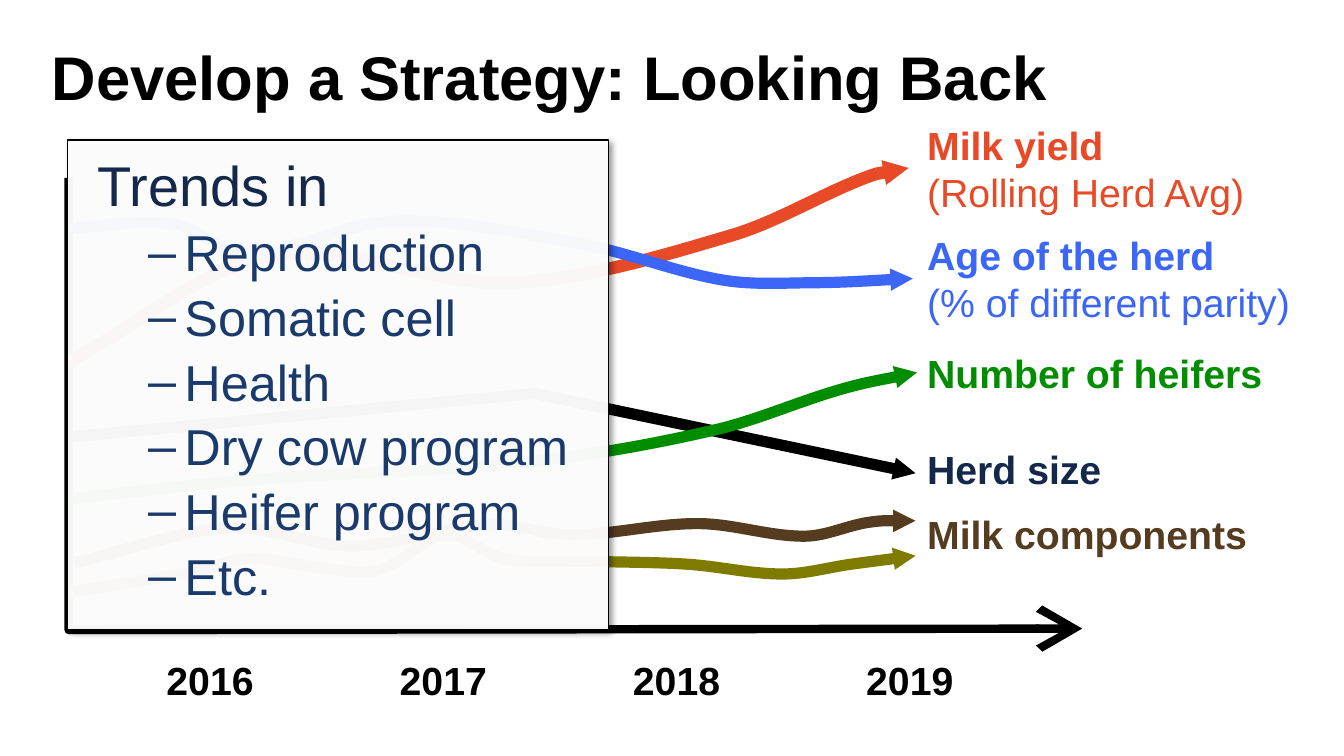
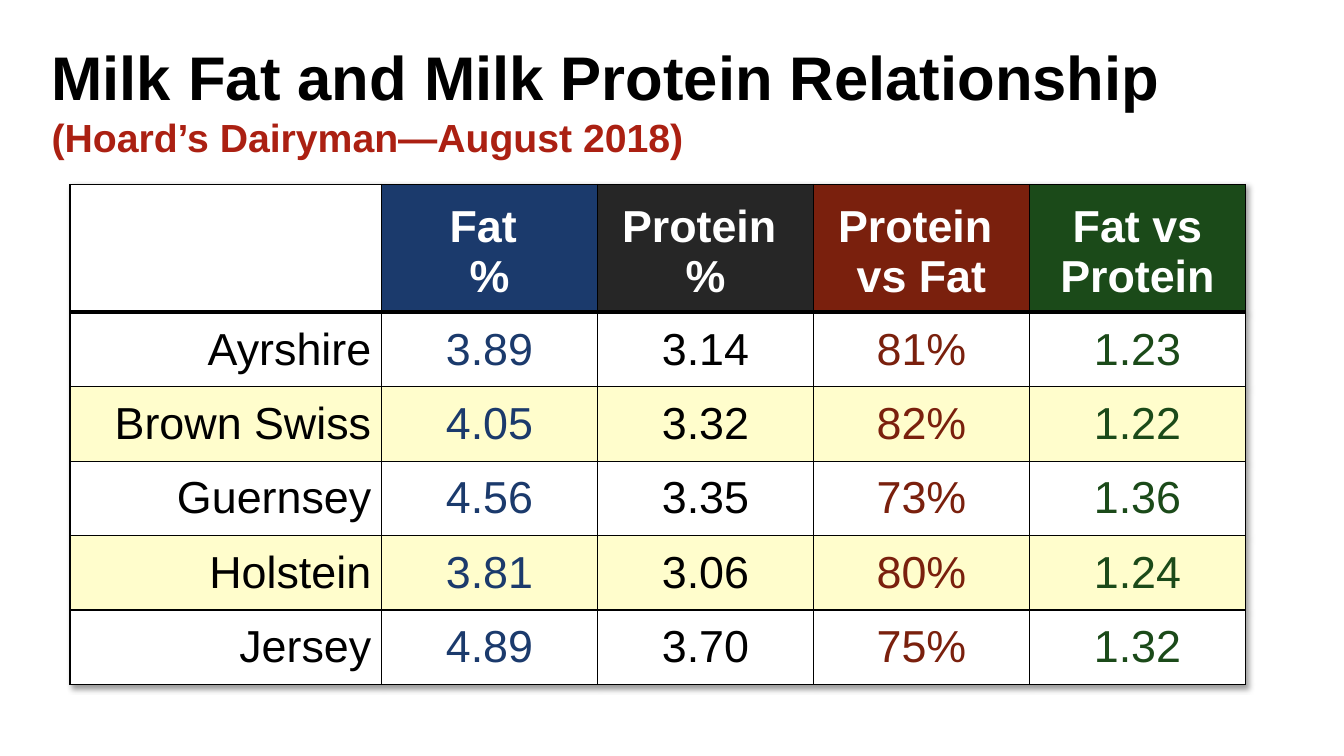
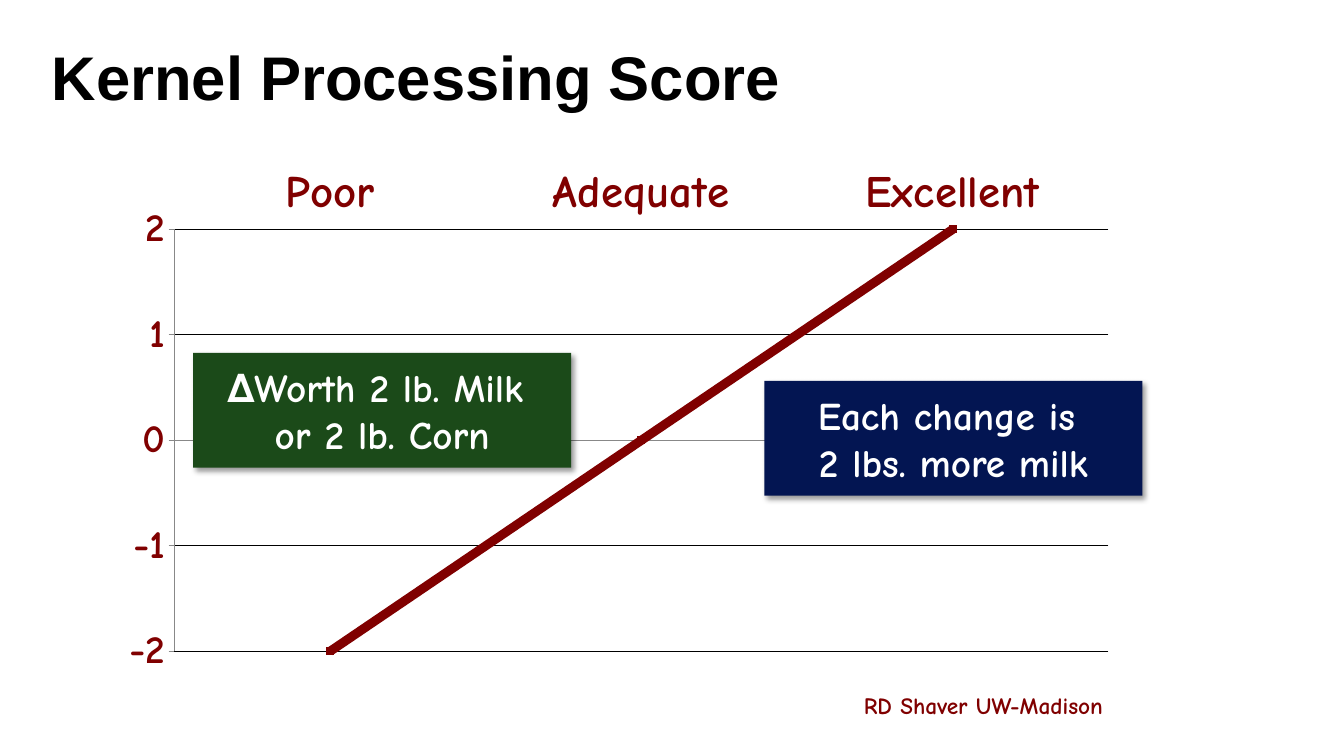
import dataclasses
import itertools

import pptx
import pptx.chart.data
import pptx.dml.color
import pptx.enum.chart
import pptx.enum.shapes
import pptx.enum.text
import pptx.oxml
import pptx.oxml.ns
import pptx.util

Pt = pptx.util.Pt
RGBColor = pptx.dml.color.RGBColor
ALIGN = pptx.enum.text.PP_ALIGN
ANCHOR = pptx.enum.text.MSO_ANCHOR
qn = pptx.oxml.ns.qn

BLACK = RGBColor(0x00, 0x00, 0x00)
WHITE = RGBColor(0xFF, 0xFF, 0xFF)
ORANGE = RGBColor(0xE8, 0x49, 0x27)
BLUE = RGBColor(0x3B, 0x66, 0xF8)
GREEN = RGBColor(0x00, 0x8E, 0x00)
BROWN = RGBColor(0x55, 0x3C, 0x21)
OLIVE = RGBColor(0x7F, 0x7B, 0x00)
INK = RGBColor(0x13, 0x28, 0x4B)
NAVY = RGBColor(0x1B, 0x3A, 0x6C)
MIDNIGHT = RGBColor(0x03, 0x15, 0x52)
CHARCOAL = RGBColor(0x26, 0x26, 0x26)
BRICK = RGBColor(0x7A, 0x20, 0x0D)
FOREST = RGBColor(0x1B, 0x4A, 0x19)
RED = RGBColor(0xAB, 0x20, 0x12)
MAROON = RGBColor(0x80, 0x00, 0x00)
CREAM = RGBColor(0xFF, 0xFD, 0xCC)
GRAY = RGBColor(0x88, 0x88, 0x88)

TITLE = {"name": "Arial", "size": Pt(44), "bold": True, "color": BLACK}
SUBTITLE = {**TITLE, "size": Pt(28), "color": RED}
LABEL = {"name": "Arial", "size": Pt(28), "bold": True, "color": BLACK}
TOPIC_HEADING = {"name": "Arial", "size": Pt(40), "color": INK}
TOPIC = {"name": "Arial", "size": Pt(36), "color": NAVY}
CELL = {"name": "Arial", "size": Pt(32), "bold": False, "color": BLACK}
HEADING_CELL = {**CELL, "bold": True, "color": WHITE}
CALLOUT = {"name": "Comic Neue", "size": Pt(28), "bold": True, "color": WHITE}
CREDIT = {**CALLOUT, "size": Pt(16.7), "color": MAROON}

SHADOW = (
    '<a:outerShdw {} blurRad="50800" dist="38100" dir="2700000" algn="tl" rotWithShape="0">'
    '<a:srgbClr val="000000"><a:alpha val="40000"/></a:srgbClr></a:outerShdw>'
)


@dataclasses.dataclass
class Trend:
    color: RGBColor
    knots: list
    weight: float = 8
    smooth: bool = True


@dataclasses.dataclass
class TrendLabel:
    top: float
    color: RGBColor
    heading: str
    detail: str = ""


MILK_YIELD = Trend(ORANGE, [(2, 138), (144, 63), (317, 82), (475, 48), (570, 7), (601, 0)], weight=9)
HERD_SIZE = Trend(BLACK, [(4, 192), (334, 161), (606, 218)], smooth=False)
FIRST_COMPONENT = Trend(BROWN, [
    (5, 282), (115, 257), (204, 270), (302, 255), (361, 262), (451, 254), (527, 263), (573, 253), (606, 252)])
SECOND_COMPONENT = Trend(OLIVE, [
    (2, 303), (87, 289), (130, 279), (177, 285), (223, 287), (270, 262),
    (312, 279), (376, 281), (443, 283), (511, 290), (560, 283), (606, 277)])
HEIFERS = Trend(GREEN, [(4, 236), (128, 223), (329, 210), (463, 187), (553, 158), (607, 146)])
HERD_AGE = Trend(BLUE, [(2, 43), (76, 40), (126, 61), (234, 38), (366, 54), (468, 80), (531, 82), (604, 79)])
TIME_AXIS = Trend(BLACK, [(1, 7), (1, 330), (725, 329)], weight=6, smooth=False)

TRENDS = [MILK_YIELD, HERD_SIZE, FIRST_COMPONENT, SECOND_COMPONENT, HEIFERS, HERD_AGE]
TREND_LABELS = [
    TrendLabel(-37, ORANGE, "Milk yield", "(Rolling Herd Avg)"),
    TrendLabel(42, BLUE, "Age of the herd", "(% of different parity)"),
    TrendLabel(126, GREEN, "Number of heifers"),
    TrendLabel(194.5, INK, "Herd size"),
    TrendLabel(241, BROWN, "Milk components"),
]
YEARS = ["2016", "2017", "2018", "2019"]
TOPICS = ["Reproduction", "Somatic cell", "Health", "Dry cow program", "Heifer program", "Etc."]

HEADINGS = [
    ("", WHITE),
    ("Fat \n%", NAVY),
    ("Protein \n%", CHARCOAL),
    ("Protein \nvs Fat", BRICK),
    ("Fat vs Protein", FOREST),
]
VALUE_COLORS = [BLACK, NAVY, BLACK, BRICK, FOREST]
BREEDS = [
    ("Ayrshire", "3.89", "3.14", "81%", "1.23"),
    ("Brown Swiss", "4.05", "3.32", "82%", "1.22"),
    ("Guernsey", "4.56", "3.35", "73%", "1.36"),
    ("Holstein", "3.81", "3.06", "80%", "1.24"),
    ("Jersey", "4.89", "3.70", "75%", "1.32"),
]


def element(template):
    return pptx.oxml.parse_xml(template.format(pptx.oxml.ns.nsdecls("a", "c")))


def set_attributes(target, values):
    for name, value in values.items():
        setattr(target, name, value)


def set_font(font, values):
    set_attributes(font, {name: value for name, value in values.items() if name != "color"})
    font.color.rgb = values["color"]


def set_line(line, color, weight):
    line.color.rgb = color
    line.width = Pt(weight)


def set_fill(fill, color):
    fill.solid()
    fill.fore_color.rgb = color


def set_margins(target, *margins):
    sides = ("margin_left", "margin_top", "margin_right", "margin_bottom")
    set_attributes(target, dict(zip(sides, map(Pt, margins))))


def write(paragraph, text, values, align=ALIGN.LEFT):
    paragraph.alignment = align
    for index, line in enumerate(text.split("\n")):
        if index:
            paragraph.add_line_break()
        run = paragraph.add_run()
        run.text = line
        set_font(run.font, values)


def add_text(slide, box, text, values, align=ALIGN.LEFT):
    frame = slide.shapes.add_textbox(*map(Pt, box)).text_frame
    frame.word_wrap = True
    write(frame.paragraphs[0], text, values, align)
    return frame


def add_panel(slide, box, color):
    panel = slide.shapes.add_shape(pptx.enum.shapes.MSO_SHAPE.RECTANGLE, *map(Pt, box))
    set_fill(panel.fill, color)
    panel.line.fill.background()
    panel.shadow.inherit = False
    panel.element.spPr.find(qn("a:effectLst")).append(element(SHADOW))
    panel.text_frame.word_wrap = True
    return panel


def add_title(slide, title, subtitle=""):
    frame = add_text(slide, (27.4, 18.5, 927, 90), title, TITLE)
    set_margins(frame, 9.4, 9.4, 9.4, 5)
    if subtitle:
        write(frame.paragraphs[0], "\n" + subtitle, SUBTITLE)


def knot_slopes(knots):
    before = knots[:1] + knots[:-1]
    after = knots[1:] + knots[-1:]
    return [(y2 - y1) / (x2 - x1) for (x1, y1), (x2, y2) in zip(before, after)]


def curve_points(knots):
    points = []
    for (start, slope), (end, end_slope) in itertools.pairwise(zip(knots, knot_slopes(knots))):
        reach = (end[0] - start[0]) / 3
        points += [
            (start[0] + reach, start[1] + reach * slope),
            (end[0] - reach, end[1] - reach * end_slope),
            end,
        ]
    return points


def bend_segments(outline):
    corners = outline.findall(qn("a:lnTo"))
    for first in range(0, len(corners), 3):
        curve = element("<a:cubicBezTo {}/>")
        corners[first].addprevious(curve)
        for corner in corners[first:first + 3]:
            curve.append(corner[0])
            outline.remove(corner)


def add_trend(slide, left, top, trend, head, head_size):
    points = curve_points(trend.knots) if trend.smooth else trend.knots[1:]
    builder = slide.shapes.build_freeform(*map(Pt, trend.knots[0]), scale=1.0)
    builder.add_line_segments([(Pt(x), Pt(y)) for x, y in points], close=False)
    arrow = builder.convert_to_shape(Pt(left), Pt(top))
    properties = arrow.element.spPr
    if trend.smooth:
        bend_segments(properties.find(".//" + qn("a:path")))
    arrow.fill.background()
    arrow.shadow.inherit = False
    set_line(arrow.line, trend.color, trend.weight)
    arrowhead = f'type="{head}" w="{head_size}" len="{head_size}"'
    properties.find(qn("a:ln")).append(element("<a:tailEnd {} " + arrowhead + "/>"))


def add_trend_label(slide, left, top, label):
    values = {**LABEL, "color": label.color}
    frame = add_text(slide, (left, top + label.top, 300, 75 if label.detail else 41), label.heading, values)
    if label.detail:
        write(frame.paragraphs[0], "\n" + label.detail, {**values, "bold": False})


def add_trend_plot(slide, left, top):
    add_trend(slide, left, top, TIME_AXIS, "arrow", "lg")
    for trend in TRENDS:
        add_trend(slide, left, top, trend, "triangle", "sm")
    for label in TREND_LABELS:
        add_trend_label(slide, left + 607.2, top, label)
    for index, year in enumerate(YEARS):
        add_text(slide, (left + 57 + index * 166.6, top + 345, 90, 41), year, LABEL, ALIGN.CENTER)


def add_topics(slide, box):
    panel = add_panel(slide, box, WHITE)
    panel.element.spPr.find(".//" + qn("a:srgbClr")).append(element('<a:alpha {} val="96000"/>'))
    set_line(panel.line, BLACK, 0.75)
    frame = panel.text_frame
    frame.vertical_anchor = ANCHOR.TOP
    set_margins(frame, 21.6, 7.2, 14.4, 7.2)
    write(frame.paragraphs[0], "Trends in", TOPIC_HEADING)
    for topic in TOPICS:
        paragraph = frame.add_paragraph()
        properties = paragraph._p.get_or_add_pPr()
        properties.set("marL", str(Pt(62)))
        properties.set("indent", str(Pt(-26)))
        properties.append(element('<a:buFont {} typeface="Arial"/>'))
        properties.append(element('<a:buChar {} char="–"/>'))
        paragraph.space_before = Pt(3)
        write(paragraph, topic, TOPIC)


def add_borders(cell, weights):
    properties = cell._tc.get_or_add_tcPr()
    for index, (side, weight) in enumerate(zip("LRTB", weights)):
        border = element("<a:ln%s {} w='%d'><a:solidFill><a:srgbClr val='%s'/></a:solidFill></a:ln%s>"
                         % (side, Pt(weight), BLACK, side))
        properties.insert(index, border)


def fill_cell(cell, text, values, fill, align, anchor, weights):
    set_fill(cell.fill, fill)
    cell.vertical_anchor = anchor
    set_margins(cell, 7.2, 7.2, 7.2, 7.2)
    add_borders(cell, weights)
    if text:
        write(cell.text_frame.paragraphs[0], text, values, align)


def add_breed_table(slide, left, top):
    widths = [222.5] + [154.3] * (len(HEADINGS) - 1)
    heights = [89.2] + [53.2] * len(BREEDS)
    box = (left, top, sum(widths), sum(heights))
    table = slide.shapes.add_table(len(heights), len(widths), *map(Pt, box)).table
    table.first_row = table.horz_banding = False
    effects = element("<a:effectLst {}/>")
    effects.append(element(SHADOW))
    table._tbl.tblPr.insert(0, effects)
    for column, width in zip(table.columns, widths):
        column.width = Pt(width)
    for row, height in zip(table.rows, heights):
        row.height = Pt(height)
    for index, (heading, fill) in enumerate(HEADINGS):
        fill_cell(table.cell(0, index), heading, HEADING_CELL, fill, ALIGN.CENTER, ANCHOR.BOTTOM, (1, 1, 1, 3))
    for row, breed in enumerate(BREEDS, 1):
        weights = (1, 1, 3 if row == 1 else 1, 1)
        fill = WHITE if row % 2 else CREAM
        for index, (text, color) in enumerate(zip(breed, VALUE_COLORS)):
            align = ALIGN.CENTER if index else ALIGN.RIGHT
            fill_cell(table.cell(row, index), text, {**CELL, "color": color}, fill, align, ANCHOR.MIDDLE, weights)


def format_axes(ratings, change):
    for axis, size in ((ratings, 32), (change, 28)):
        set_font(axis.tick_labels.font, {**CALLOUT, "size": Pt(size), "color": MAROON})
        axis.major_tick_mark = pptx.enum.chart.XL_TICK_MARK.OUTSIDE
        axis.minor_tick_mark = pptx.enum.chart.XL_TICK_MARK.NONE
        set_line(axis.format.line, GRAY, 0.75)
    ratings.tick_label_position = pptx.enum.chart.XL_TICK_LABEL_POSITION.HIGH
    set_attributes(change, {
        "minimum_scale": -2, "maximum_scale": 2, "major_unit": 1, "has_major_gridlines": True})
    set_line(change.major_gridlines.format.line, BLACK, 0.75)


def format_score(score):
    score.smooth = False
    set_line(score.format.line, MAROON, 6.5)
    set_attributes(score.marker, {"style": pptx.enum.chart.XL_MARKER_STYLE.SQUARE, "size": 5})
    set_fill(score.marker.format.fill, MAROON)
    score.marker.format.line.color.rgb = MAROON


def place_plot_area(chart, x, y, w, h):
    area = chart.element.find(".//" + qn("c:plotArea"))
    for layout in area.findall(qn("c:layout")):
        area.remove(layout)
    settings = {"layoutTarget": "inner", "xMode": "edge", "yMode": "edge", "x": x, "y": y, "w": w, "h": h}
    places = "".join(f'<c:{name} val="{value}"/>' for name, value in settings.items())
    area.insert(0, element("<c:layout {}><c:manualLayout>" + places + "</c:manualLayout></c:layout>"))


def add_score_chart(slide, box):
    scores = pptx.chart.data.CategoryChartData()
    scores.categories = ["Poor", "Adequate", "Excellent"]
    scores.add_series("Series 1", (-2, 0, 2))
    kind = pptx.enum.chart.XL_CHART_TYPE.LINE_MARKERS
    chart = slide.shapes.add_chart(kind, *map(Pt, box), scores).chart
    chart.has_title = chart.has_legend = False
    set_font(chart.font, {"name": "Comic Neue", "size": Pt(16.7), "color": BLACK})
    format_axes(chart.category_axis, chart.value_axis)
    chart.plots[0].vary_by_categories = False
    format_score(chart.plots[0].series[0])
    place_plot_area(chart, 0.08, 0.17, 0.91, 0.79)


def add_callout(slide, left, top, color, lines, side_margin):
    frame = add_panel(slide, (left, top, 270, 82), color).text_frame
    frame.vertical_anchor = ANCHOR.MIDDLE
    set_margins(frame, side_margin, 7.2, side_margin, 7.2)
    for index, line in enumerate(lines):
        paragraph = frame.add_paragraph() if index else frame.paragraphs[0]
        write(paragraph, line, CALLOUT, ALIGN.CENTER)


def build_strategy_slide(slide):
    add_title(slide, "Develop a Strategy: Looking Back")
    add_trend_plot(slide, 48, 120)
    add_topics(slide, (48.2, 100, 386.8, 350))


def build_breed_slide(slide):
    add_title(slide, "Milk Fat and Milk Protein Relationship", "(Hoard’s Dairyman—August 2018)")
    add_breed_table(slide, 50, 131.8)


def build_kernel_slide(slide):
    add_title(slide, "Kernel Processing Score")
    add_score_chart(slide, (66, 99, 733, 382))
    add_callout(slide, 546, 272, MIDNIGHT, ["Each change is ", "2 lbs. more milk"], 14.4)
    add_text(slide, (610, 490.3, 213, 27), "RD Shaver UW-Madison", CREDIT)
    add_callout(slide, 138, 252, FOREST, ["∆Worth 2 lb. Milk ", "or 2 lb. Corn"], 7.2)


def main():
    deck = pptx.Presentation()
    deck.slide_width, deck.slide_height = Pt(960), Pt(540)
    for build in (build_strategy_slide, build_breed_slide, build_kernel_slide):
        build(deck.slides.add_slide(deck.slide_layouts[6]))
    deck.save("out.pptx")


if __name__ == "__main__":
    main()
